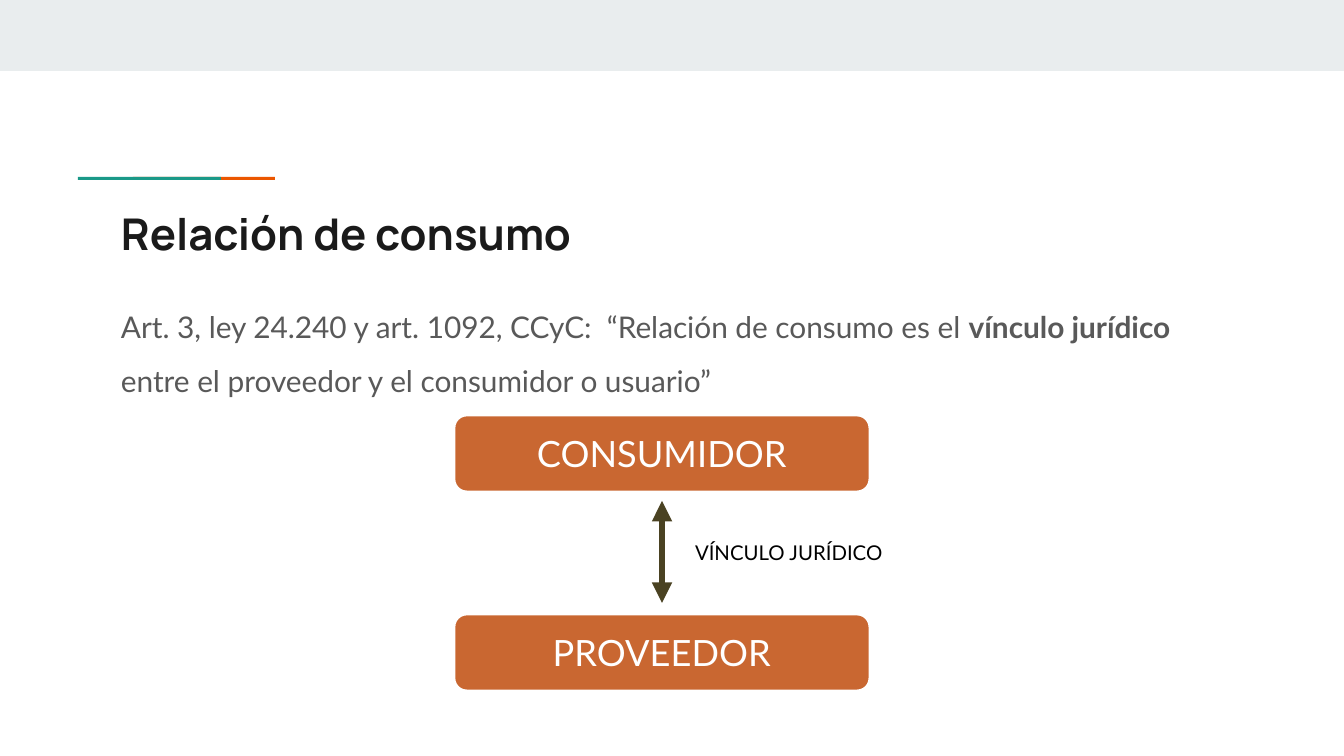
from dataclasses import dataclass

from lxml.etree import SubElement
from pptx import Presentation
from pptx.dml.color import RGBColor as RGB
from pptx.enum.shapes import MSO_CONNECTOR as Connector, MSO_SHAPE as Shape
from pptx.enum.text import MSO_ANCHOR as Anchor, PP_ALIGN as Align
from pptx.oxml.ns import qn
from pptx.util import Emu, Pt

SCALE = 914400 / 134.4


@dataclass(frozen=True)
class Theme:
    heading: str = "Manrope"
    body: str = "Lato"
    band: str = "E9EDEE"
    teal: str = "1A9988"
    orange: str = "EB5600"
    party: str = "C96731"
    arrow: str = "4A4222"
    white: str = "FFFFFF"
    black: str = "000000"
    title_ink: str = "1A1A1A"
    body_ink: str = "595959"
    title_size: float = 23.4
    body_size: float = 16
    party_size: float = 19.4
    label_size: float = 10.9
    outline: float = 1.52
    arrow_width: float = 3.65


@dataclass(frozen=True)
class Box:
    x: int
    y: int
    w: int
    h: int


@dataclass(frozen=True)
class Bar:
    box: Box
    color: str


@dataclass(frozen=True)
class Party:
    name: str
    box: Box


@dataclass(frozen=True)
class Style:
    font: str
    size: float
    color: str


@dataclass(frozen=True)
class Run:
    text: str
    bold: bool = False


@dataclass(frozen=True)
class TextBlock:
    box: Box
    style: Style
    runs: tuple[Run, ...]
    insets: tuple[int, int, int, int] = (13, 13, 13, 13)
    spacing: float = 1.0
    wrap: bool = True


T = Theme()
PARTY_X, PARTY_W, PARTY_H = 454, 416, 77
AXIS_X = PARTY_X + PARTY_W // 2
ARROW_TOP, ARROW_BOTTOM = 501, 603

BARS = (
    Bar(Box(0, 0, 1344, 71), T.band),
    Bar(Box(133, 177, 142, 3), T.orange),
    Bar(Box(78, 177, 143, 3), T.teal),
)
PARTIES = tuple(
    Party(name, Box(PARTY_X, y, PARTY_W, PARTY_H))
    for name, y in (("CONSUMIDOR", 415), ("PROVEEDOR", 614))
)
TEXTS = (
    TextBlock(
        Box(108, 194, 1130, 79),
        Style(T.heading, T.title_size, T.title_ink),
        (Run("Relación de consumo", True),),
    ),
    TextBlock(
        Box(108, 278, 1130, 446),
        Style(T.body, T.body_size, T.body_ink),
        (
            Run("Art. 3, ley 24.240 y art. 1092, CCyC:  “Relación de consumo es el "),
            Run("vínculo jurídico", True),
            Run(" entre el proveedor y el consumidor o usuario”"),
        ),
        spacing=1.5,
    ),
    TextBlock(
        Box(672, 536, 219, 34),
        Style(T.body, T.label_size, T.black),
        (Run("VÍNCULO JURÍDICO"),),
        insets=(23, 4, 8, 4),
        wrap=False,
    ),
)


def px(n: int) -> Emu:
    return Emu(round(n * SCALE))


def place(box: Box) -> tuple[Emu, Emu, Emu, Emu]:
    return px(box.x), px(box.y), px(box.w), px(box.h)


def set_insets(tf, insets: tuple[int, int, int, int]) -> None:
    tf.margin_left, tf.margin_top, tf.margin_right, tf.margin_bottom = map(px, insets)


def add_run(p, run: Run, style: Style) -> None:
    r = p.add_run()
    r.text = run.text
    r.font.name = style.font
    r.font.size = Pt(style.size)
    r.font.bold = run.bold
    r.font.color.rgb = RGB.from_string(style.color)


def add_filled(s, kind: Shape, box: Box, color: str):
    sp = s.shapes.add_shape(kind, *place(box))
    sp.shadow.inherit = False
    sp.fill.solid()
    sp.fill.fore_color.rgb = RGB.from_string(color)
    sp.line.fill.background()
    return sp


def add_bar(s, bar: Bar) -> None:
    add_filled(s, Shape.RECTANGLE, bar.box, bar.color)


def add_party(s, party: Party) -> None:
    sp = add_filled(s, Shape.ROUNDED_RECTANGLE, party.box, T.party)
    sp.line.color.rgb = RGB.from_string(T.white)
    sp.line.width = Pt(T.outline)
    tf = sp.text_frame
    tf.word_wrap = True
    tf.vertical_anchor = Anchor.MIDDLE
    set_insets(tf, (8, 4, 8, 4))
    p = tf.paragraphs[0]
    p.alignment = Align.CENTER
    add_run(p, Run(party.name), Style(T.body, T.party_size, T.white))


def add_text(s, block: TextBlock) -> None:
    tf = s.shapes.add_textbox(*place(block.box)).text_frame
    tf.word_wrap = block.wrap
    set_insets(tf, block.insets)
    p = tf.paragraphs[0]
    p.line_spacing = block.spacing
    for run in block.runs:
        add_run(p, run, block.style)


def add_double_arrow(s, x: int, top: int, bottom: int) -> None:
    line = s.shapes.add_connector(Connector.STRAIGHT, px(x), px(top), px(x), px(bottom))
    line.line.color.rgb = RGB.from_string(T.arrow)
    line.line.width = Pt(T.arrow_width)
    ln = line.line._get_or_add_ln()
    for end in ("a:headEnd", "a:tailEnd"):
        SubElement(ln, qn(end), type="triangle")
    SubElement(line._element.spPr, qn("a:effectLst"))


def main() -> None:
    prs = Presentation()
    prs.slide_width, prs.slide_height = px(1344), px(756)
    s = prs.slides.add_slide(prs.slide_layouts[6])
    for bar in BARS:
        add_bar(s, bar)
    for block in TEXTS:
        add_text(s, block)
    for party in PARTIES:
        add_party(s, party)
    add_double_arrow(s, AXIS_X, ARROW_TOP, ARROW_BOTTOM)
    prs.save("out.pptx")


if __name__ == "__main__":
    main()
